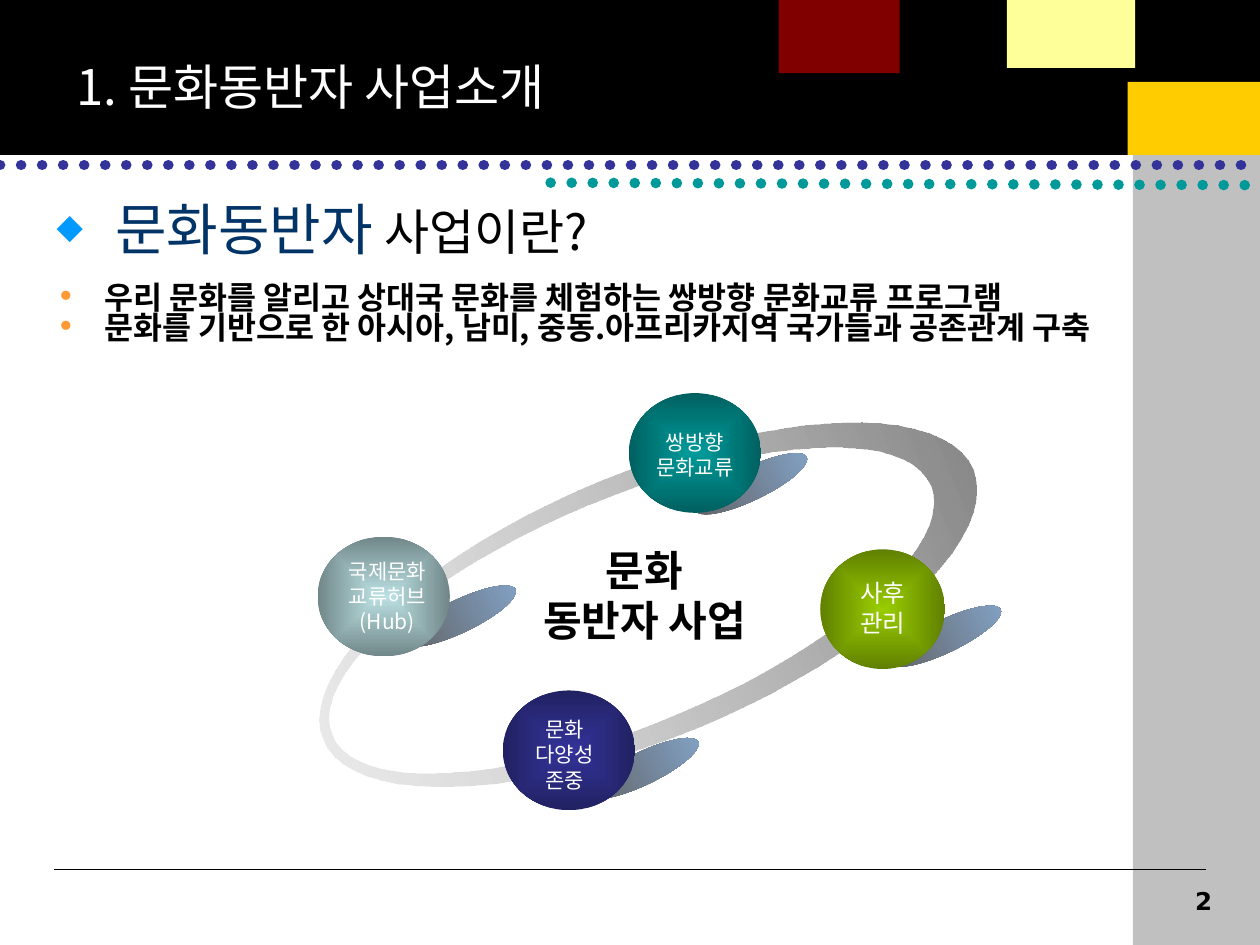
from dataclasses import dataclass
from math import cos, pi, sin
from typing import NamedTuple

from pptx import Presentation
from pptx.dml.color import RGBColor as RGB
from pptx.enum.dml import MSO_LINE as Dash
from pptx.enum.shapes import MSO_CONNECTOR as Connector, MSO_SHAPE as Preset
from pptx.enum.text import MSO_ANCHOR as Anchor, MSO_AUTO_SIZE as AutoSize, PP_ALIGN as Align
from pptx.oxml import parse_xml
from pptx.oxml.ns import nsdecls, qn
from pptx.util import Inches, Pt


@dataclass(frozen=True)
class Theme:
    korean: str = "Noto Sans CJK KR"
    latin: str = "DejaVu Sans"
    black: str = "000000"
    white: str = "FFFFFF"
    side: str = "C0C0C0"
    navy: str = "333399"
    teal: str = "009999"
    heading: str = "003366"
    diamond: str = "0099FF"
    dot: str = "FF9933"
    shadow: tuple = ("5F5F5F", "84A5CA")
    ring: tuple = ("CCCCCC", "808080")
    keyword_size: int = 32
    title_size: int = 28
    center_size: int = 24
    bullet_size: int = 18
    label_size: int = 12
    large_label_size: int = 14


THEME = Theme()


class Box(NamedTuple):
    left: float
    top: float
    width: float
    height: float


class Block(NamedTuple):
    box: Box
    color: str


class Rule(NamedTuple):
    start: tuple
    end: tuple
    color: str
    width: float
    dotted: bool = False


class Ball(NamedTuple):
    box: Box
    shadow: tuple
    colors: tuple
    label_box: Box
    lines: tuple
    size: int = THEME.label_size
    align: Align = Align.CENTER
    font: str = THEME.latin


BLOCKS = [
    Block(Box(0, 0, 10, 1.23), THEME.black),
    Block(Box(6.18, 0, 0.96, 0.58), "800000"),
    Block(Box(7.99, 0, 1.02, 0.54), "FFFF99"),
    Block(Box(8.95, 0.65, 1.05, 0.58), "FFCC00"),
]
FOOTER_RULE = Rule((0.43, 6.9), (9.57, 6.9), THEME.black, 0.75)
DOTTED_RULES = [
    Rule((0, 1.31), (10, 1.31), THEME.navy, 6, True),
    Rule((4.37, 1.45), (10, 1.47), THEME.teal, 6, True),
]
BALLS = [
    Ball(Box(4.99, 3.12, 1.05, 0.95), (5.47, 3.71), (THEME.teal, "006060"),
         Box(5.08, 3.36, 0.87, 0.5), ("쌍방향", "문화교류")),
    Ball(Box(2.52, 4.26, 1.05, 0.95), (3.16, 4.76), ("BBE0E3", "718789"),
         Box(2.64, 4.38, 0.87, 0.7), ("국제문화", "교류허브", "(Hub)"), font=THEME.korean),
    Ball(Box(3.99, 5.48, 1.05, 0.95), (4.61, 5.97), (THEME.navy, "212162"),
         Box(4.13, 5.64, 0.7, 0.7), ("문화", "다양성", "존중")),
    Ball(Box(6.51, 4.36, 0.99, 0.95), (7.01, 4.92), ("99CC00", "608000"),
         Box(6.73, 4.54, 0.59, 0.57), ("사후", "관리"), THEME.large_label_size, Align.LEFT),
]
BULLETS = [
    "우리 문화를 알리고 상대국 문화를 체험하는 쌍방향 문화교류 프로그램",
    "문화를 기반으로 한 아시아, 남미, 중동.아프리카지역 국가들과 공존관계 구축",
]


def lengths(values) -> list:
    return [Inches(value) for value in values]


def apply(target, **values) -> None:
    for name, value in values.items():
        setattr(target, name, value)


def add_preset(slide, preset: Preset, box: Box, color: str = THEME.black):
    shape = slide.shapes.add_shape(preset, *lengths(box))
    return finish(shape, color)


def finish(shape, color: str):
    shape.shadow.inherit = False
    shape.line.fill.background()
    shape.fill.solid()
    shape.fill.fore_color.rgb = RGB.from_string(color)
    return shape


def set_gradient(shape, colors: tuple, radial: bool = False, first_alpha: int = 100) -> None:
    direction = ('<a:path path="shape"><a:fillToRect l="50000" t="50000" r="50000" b="50000"/></a:path>'
                 if radial else '<a:lin ang="0" scaled="1"/>')
    gradient = parse_xml(
        f'<a:gradFill {nsdecls("a")} rotWithShape="1"><a:gsLst>'
        f'<a:gs pos="0"><a:srgbClr val="{colors[0]}"><a:alpha val="{first_alpha * 1000}"/></a:srgbClr></a:gs>'
        f'<a:gs pos="100000"><a:srgbClr val="{colors[1]}"/></a:gs></a:gsLst>{direction}</a:gradFill>')
    properties = shape._element.spPr
    properties.replace(properties.find(qn("a:solidFill")), gradient)


def add_rule(slide, rule: Rule) -> None:
    connector = slide.shapes.add_connector(Connector.STRAIGHT, *lengths(rule.start + rule.end))
    connector.line.color.rgb = RGB.from_string(rule.color)
    connector.line.width = Pt(rule.width)
    properties = connector._element.spPr
    if rule.dotted:
        connector.line.dash_style = Dash.ROUND_DOT
        properties.find(qn("a:ln")).set("cap", "rnd")
    properties.append(parse_xml(f'<a:effectLst {nsdecls("a")}/>'))


def add_run(paragraph, text: str, size: int, color: str, font: str = THEME.korean, bold: bool = False) -> None:
    run = paragraph.add_run()
    run.text = text
    apply(run.font, size=Pt(size), bold=bold, name=font)
    run.font.color.rgb = RGB.from_string(color)
    run._r.get_or_add_rPr().append(parse_xml(f'<a:ea {nsdecls("a")} typeface="{THEME.korean}"/>'))


def add_text(slide, box: Box, lines: tuple, align: Align, wrap: bool = False, **run_format):
    frame = slide.shapes.add_textbox(*lengths(box)).text_frame
    apply(frame, word_wrap=wrap, auto_size=AutoSize.SHAPE_TO_FIT_TEXT)
    for index, line in enumerate(lines):
        paragraph = frame.paragraphs[0] if index == 0 else frame.add_paragraph()
        paragraph.alignment = align
        add_run(paragraph, line, **run_format)
    return frame


def set_bullet(paragraph, character: str, color: str, percent: int = 100) -> None:
    properties = paragraph._p.get_or_add_pPr()
    properties.set("marL", str(Inches(0.38)))
    properties.set("indent", str(-Inches(0.38)))
    for element in (f'<a:buClr {nsdecls("a")}><a:srgbClr val="{color}"/></a:buClr>',
                    f'<a:buSzPct {nsdecls("a")} val="{percent * 1000}"/>',
                    f'<a:buFont {nsdecls("a")} typeface="{THEME.latin}"/>',
                    f'<a:buChar {nsdecls("a")} char="{character}"/>'):
        properties.append(parse_xml(element))
    paragraph.line_spacing = 0.8


def ellipse_points(center: tuple, radii: tuple, turn: int, steps: int = 80) -> list:
    angles = [turn * 2 * pi * step / steps for step in range(steps)]
    return [(round(1000 * (center[0] + radii[0] * cos(angle))),
             round(1000 * (center[1] + radii[1] * sin(angle)))) for angle in angles]


def add_ring(slide) -> None:
    outer = ellipse_points((5.14, 4.8), (2.79, 1.05), 1)
    inner = ellipse_points((5, 4.79), (2.57, 0.9), -1)
    builder = slide.shapes.build_freeform(*outer[0], scale=Inches(1) / 1000)
    builder.add_line_segments(outer[1:], close=True)
    builder.move_to(*inner[0])
    builder.add_line_segments(inner[1:], close=True)
    ring = finish(builder.convert_to_shape(), THEME.black)
    ring.rotation = 337.4
    set_gradient(ring, THEME.ring, first_alpha=36)


def add_title(slide) -> None:
    title = slide.shapes.title
    slide.shapes._spTree.append(title._element)  # in front of the black band
    apply(title, **dict(zip(("left", "top", "width", "height"), lengths((0.51, 0.4, 4.27, 0.57)))))
    apply(title.text_frame, word_wrap=False, vertical_anchor=Anchor.TOP,
          auto_size=AutoSize.SHAPE_TO_FIT_TEXT)
    paragraph = title.text_frame.paragraphs[0]
    paragraph.alignment = Align.LEFT
    add_run(paragraph, "1. 문화동반자 사업소개", THEME.title_size, THEME.white)


def add_introduction(slide) -> None:
    frame = add_text(slide, Box(0.35, 1.48, 9.15, 1.43), (" ",), Align.LEFT,
                     size=THEME.title_size, color=THEME.black)
    frame.vertical_anchor = Anchor.MIDDLE
    heading = frame.paragraphs[0]
    set_bullet(heading, "◆", THEME.diamond, 70)
    add_run(heading, "문화동반자", THEME.keyword_size, THEME.heading)
    add_run(heading, " 사업이란?", THEME.title_size, THEME.black)
    for index, text in enumerate(BULLETS):
        paragraph = frame.add_paragraph()
        set_bullet(paragraph, "•", THEME.dot)
        paragraph.space_before = Pt(0 if index else 14)
        add_run(paragraph, text, THEME.bullet_size, THEME.black, bold=True)


def add_cycle(slide) -> None:
    add_ring(slide)
    for ball in BALLS:
        shadow = add_preset(slide, Preset.OVAL, Box(*ball.shadow, 0.98, 0.26))
        shadow.rotation = 334.3
        set_gradient(shadow, THEME.shadow)
    for ball in BALLS:
        set_gradient(add_preset(slide, Preset.OVAL, ball.box), ball.colors, radial=True)
        add_text(slide, ball.label_box, ball.lines, ball.align,
                 size=ball.size, color=THEME.white, font=ball.font)
    add_text(slide, Box(4.06, 4.27, 2.11, 0.9), ("문화", "동반자 사업"), Align.CENTER, wrap=True,
             size=THEME.center_size, color=THEME.black, bold=True)


def main() -> None:
    presentation = Presentation()
    presentation.slide_width, presentation.slide_height = lengths((10, 7.5))
    slide = presentation.slides.add_slide(presentation.slide_layouts[5])

    # Backdrop: side column, footer line, header blocks and dotted lines
    add_preset(slide, Preset.RECTANGLE, Box(8.99, 1.07, 1.01, 6.43), THEME.side)
    add_rule(slide, FOOTER_RULE)
    for block in BLOCKS:
        add_preset(slide, Preset.RECTANGLE, *block)
    for rule in DOTTED_RULES:
        add_rule(slide, rule)

    # Text and cycle
    add_text(slide, Box(8.11, 6.98, 1.61, 0.52), ("2",), Align.RIGHT, wrap=True,
             size=THEME.large_label_size, color=THEME.black, font=THEME.latin, bold=True)
    add_introduction(slide)
    add_title(slide)
    add_cycle(slide)
    presentation.save("out.pptx")


if __name__ == "__main__":
    main()
